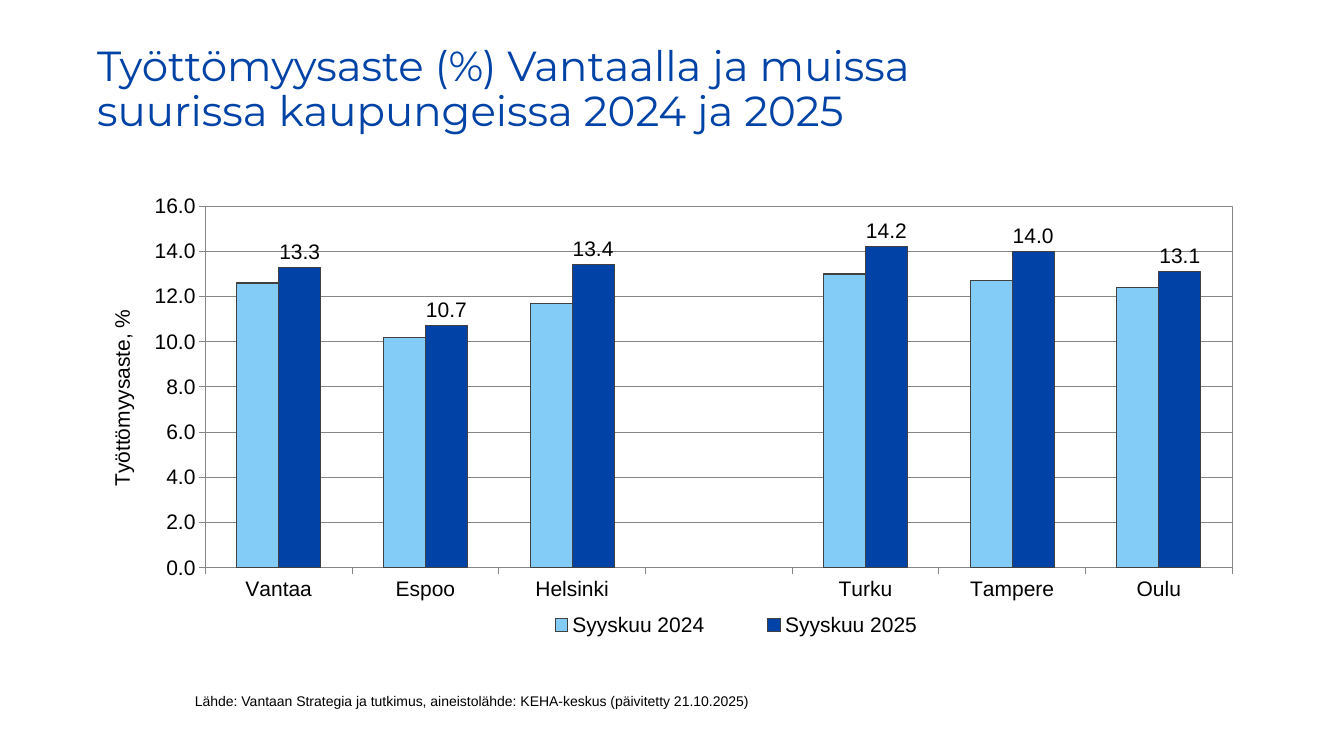
from dataclasses import dataclass

from lxml import etree
from pptx import Presentation
from pptx.chart.data import CategoryChartData
from pptx.dml.color import RGBColor
from pptx.enum.chart import XL_CHART_TYPE, XL_LABEL_POSITION, XL_LEGEND_POSITION, XL_TICK_MARK
from pptx.enum.text import MSO_ANCHOR, PP_ALIGN
from pptx.oxml import parse_xml
from pptx.oxml.ns import nsdecls, qn
from pptx.util import Emu, Pt

COLUMNS = XL_CHART_TYPE.COLUMN_CLUSTERED
OUTSIDE_END = XL_LABEL_POSITION.OUTSIDE_END
LEGEND_BOTTOM = XL_LEGEND_POSITION.BOTTOM
TICK_OUT = XL_TICK_MARK.OUTSIDE
TOP = MSO_ANCHOR.TOP
LEFT = PP_ALIGN.LEFT
SCALE = 914400 / 100.8


@dataclass(frozen=True)
class Theme:
    title_font: str = "Montserrat"
    body_font: str = "Arial"
    title_size: int = 30
    chart_size: int = 15
    source_size: int = 10
    title: str = "0042A6"
    text: str = "000000"
    grid: str = "868686"
    bar_line: str = "404040"
    bars: tuple = ("84CCF8", "0042A5")


THEME = Theme()
TITLE = ("Työttömyysaste (%) Vantaalla ja muissa", "suurissa kaupungeissa 2024 ja 2025")
SOURCE = "Lähde: Vantaan Strategia ja tutkimus, aineistolähde: KEHA-keskus (päivitetty 21.10.2025)"
CITIES = ("Vantaa", "Espoo", "Helsinki", "", "Turku", "Tampere", "Oulu")
RATES = {
    "Syyskuu 2024": (12.6, 10.2, 11.7, None, 13, 12.7, 12.4),
    "Syyskuu 2025": (13.3, 10.7, 13.4, None, 14.2, 14, 13.1),
}


def px(n):
    return Emu(round(n * SCALE))


def box(*lengths):
    return [px(n) for n in lengths]


def style_font(font, name, size, color, bold=False):
    font.name = name
    font.size = Pt(size)
    font.bold = bold
    font.color.rgb = RGBColor.from_string(color)


def style_line(line, color):
    line.color.rgb = RGBColor.from_string(color)
    line.width = Pt(0.75)


def add_run(p, text, name, size, color):
    r = p.add_run()
    r.text = text
    style_font(r.font, name, size, color)


def add_title(s, lines):
    sp = s.shapes.title
    sp.left, sp.top, sp.width, sp.height = box(87, 40, 1159, 146)
    tf = sp.text_frame
    tf.word_wrap = True
    tf.vertical_anchor = TOP
    p = tf.paragraphs[0]
    p.alignment = LEFT
    p.line_spacing = 0.9
    for i, line in enumerate(lines):
        if i:
            p.add_line_break()
        add_run(p, line, THEME.title_font, THEME.title_size, THEME.title)


def add_source(s, text):
    tf = s.shapes.add_textbox(*box(185, 688, 587, 40)).text_frame
    tf.word_wrap = True
    add_run(tf.paragraphs[0], text, THEME.body_font, THEME.source_size, THEME.text)


def set_layout(parent, index, x, y, w=None, h=None, inner=False):
    for old in parent.findall(qn("c:layout")):
        parent.remove(old)
    layout = parse_xml(f"<c:layout {nsdecls('c')}><c:manualLayout/></c:layout>")
    values = [("layoutTarget", "inner")] if inner else []
    values += [("xMode", "edge"), ("yMode", "edge"), ("x", x), ("y", y)]
    if w is not None:
        values += [("w", w), ("h", h)]
    for tag, value in values:
        etree.SubElement(layout[0], qn(f"c:{tag}")).set("val", str(value))
    parent.insert(index, layout)


def style_axes(chart):
    for axis in (chart.category_axis, chart.value_axis):
        axis.major_tick_mark = TICK_OUT
        style_line(axis.format.line, THEME.grid)
    axis = chart.value_axis
    axis.minimum_scale, axis.maximum_scale, axis.major_unit = 0, 16, 2
    axis.tick_labels.number_format = "0.0"
    axis.tick_labels.number_format_is_linked = False
    style_line(axis.major_gridlines.format.line, THEME.grid)
    p = axis.axis_title.text_frame.paragraphs[0]
    add_run(p, "Työttömyysaste, %", THEME.body_font, THEME.chart_size, THEME.text)
    set_layout(axis.axis_title._element, 1, 0.01, 0.26)


def style_series(series, color):
    series.format.fill.solid()
    series.format.fill.fore_color.rgb = RGBColor.from_string(color)
    style_line(series.format.line, THEME.bar_line)


def label_series(series):
    labels = series.data_labels
    labels.show_value = True
    labels.position = OUTSIDE_END
    labels.number_format = "0.0"
    labels.number_format_is_linked = False
    style_font(labels.font, THEME.body_font, THEME.chart_size, THEME.text)


def frame_plot(chart):
    area = chart._chartSpace.chart.plotArea
    set_layout(area, 0, 0.097, 0.044, 0.886, 0.786, inner=True)
    area.append(parse_xml(
        f"<c:spPr {nsdecls('c', 'a')}><a:noFill/><a:ln w=\"9525\"><a:solidFill>"
        f"<a:srgbClr val=\"{THEME.grid}\"/></a:solidFill></a:ln></c:spPr>"))


def add_rate_chart(s):
    data = CategoryChartData(number_format="0.0")
    data.categories = CITIES
    for name, values in RATES.items():
        data.add_series(name, values)
    chart = s.shapes.add_chart(COLUMNS, *box(93, 186, 1159, 460), data).chart
    chart.has_title = False
    style_font(chart.font, THEME.body_font, THEME.chart_size, THEME.text)
    plot = chart.plots[0]
    plot.gap_width, plot.overlap, plot.vary_by_categories = 150, 0, False
    for series, color in zip(plot.series, THEME.bars):
        style_series(series, color)
    label_series(plot.series[-1])
    style_axes(chart)
    frame_plot(chart)
    chart.has_legend = True
    chart.legend.position = LEGEND_BOTTOM
    chart.legend.include_in_layout = False
    set_layout(chart.legend._element, 1, 0.35, 0.92, 0.41, 0.07)


def main():
    prs = Presentation()
    prs.slide_width, prs.slide_height = box(1344, 756)
    s = prs.slides.add_slide(prs.slide_layouts[5])
    add_title(s, TITLE)
    add_rate_chart(s)
    add_source(s, SOURCE)
    prs.save("out.pptx")


if __name__ == "__main__":
    main()
